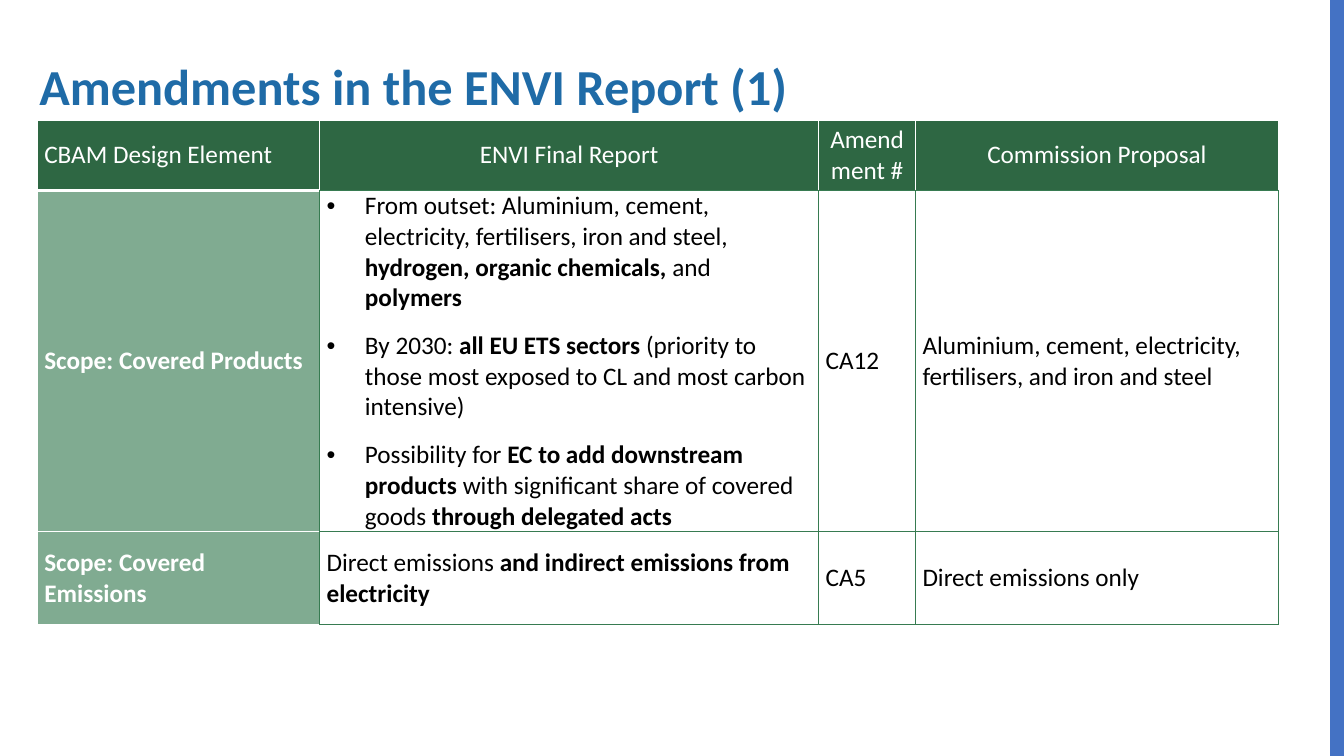
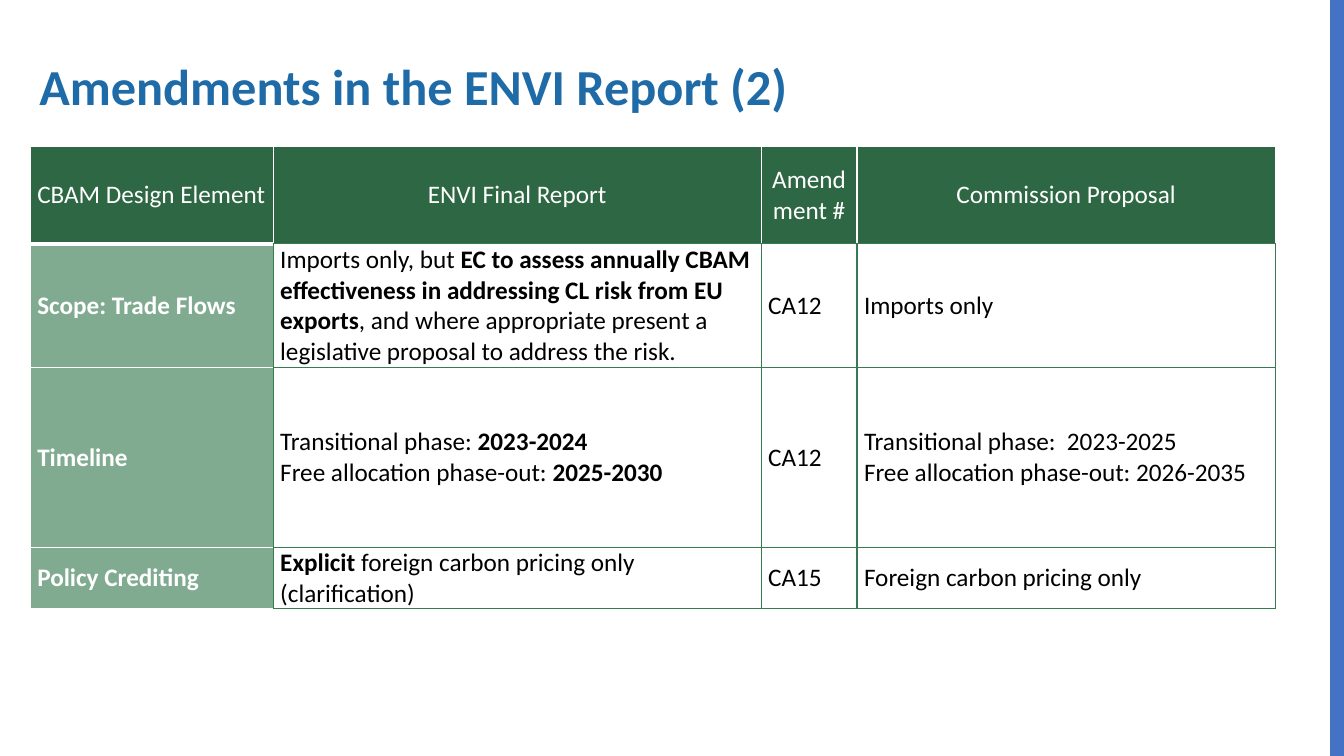
from dataclasses import dataclass

from lxml.etree import SubElement as Sub
from pptx import Presentation as Deck
from pptx.dml.color import RGBColor as Rgb
from pptx.enum.shapes import MSO_CONNECTOR as Conn
from pptx.enum.text import MSO_ANCHOR as Anchor, MSO_AUTO_SIZE as Fit, PP_ALIGN as Align
from pptx.oxml.ns import qn
from pptx.util import Inches, Pt


@dataclass(frozen=True)
class Theme:
    font: str = "Calibri"
    title: str = "1F6BA7"
    band: str = "4472C4"
    head: str = "2E6743"
    green: str = "377B51"
    white: str = "FFFFFF"
    black: str = "000000"
    big: int = 36
    small: int = 18
    tint: int = 63


HEAD = ["CBAM Design Element", "ENVI Final Report", "Amendment #", "Commission Proposal"]


class Show:
    def __init__(self, theme):
        self.theme = theme
        self.deck = Deck()
        self.deck.slide_width = Inches(13.33)
        self.deck.slide_height = Inches(7.5)
        self.layout = self.deck.slide_layouts[5]
        self.slide = None
        title = self.layout.placeholders[0]
        title.left, title.top = Inches(0.29), Inches(0.46)
        title.width, title.height = Inches(11.96), Inches(0.73)

    def page(self, text):
        self.slide = self.deck.slides.add_slide(self.layout)
        self.band()
        self.title(text)

    def band(self):
        x = Inches(13.27)
        line = self.slide.shapes.add_connector(Conn.STRAIGHT, x, 0, x, Inches(7.5))
        line.line.color.rgb = Rgb.from_string(self.theme.band)
        line.line.width = Pt(12)
        Sub(line.element.spPr, qn("a:effectLst"))

    def title(self, text):
        frame = self.slide.shapes.title.text_frame
        frame.text = text
        frame.auto_size = Fit.NONE
        frame.vertical_anchor = Anchor.TOP
        para = frame.paragraphs[0]
        para.alignment = Align.LEFT
        para.line_spacing = 1.07
        self.style(para.runs[0], self.theme.big, self.theme.title, True)

    def style(self, run, size, color, bold):
        font = run.font
        font.name, font.size, font.bold = self.theme.font, Pt(size), bold
        font.color.rgb = Rgb.from_string(color)

    def bullet(self, para):
        props = para._p.get_or_add_pPr()
        props.set("marL", str(Inches(0.38)))
        props.set("indent", str(Inches(-0.38)))
        Sub(props, qn("a:buFont"), typeface="Arial")
        Sub(props, qn("a:buChar"), char="•")

    def phrase(self, para, text, color, bold):
        for spot, part in enumerate(text.split("**")):
            for row, words in enumerate(part.split("\v")):
                if row:
                    para.add_line_break()
                if words:
                    run = para.add_run()
                    run.text = words
                    self.style(run, self.theme.small, color, bold or spot % 2 == 1)

    def label(self, cell, text, color, bold=False, gap=6, align=Align.LEFT):
        cell.vertical_anchor = Anchor.MIDDLE
        cell.margin_left = cell.margin_right = Inches(0.07)
        cell.margin_top = cell.margin_bottom = 0
        frame = cell.text_frame
        items = text.split("\n")
        for spot, item in enumerate(items):
            para = frame.add_paragraph() if spot else frame.paragraphs[0]
            para.alignment = align
            para.space_before = Pt(gap if spot else 0)
            para.space_after = Pt(gap)
            if len(items) > 1:
                self.bullet(para)
            self.phrase(para, item, color, bold)

    def paint(self, cell, color, tint=100):
        cell.fill.solid()
        cell.fill.fore_color.rgb = Rgb.from_string(color)
        if tint < 100:
            tone = cell._tc.tcPr.find(".//" + qn("a:srgbClr"))
            Sub(tone, qn("a:alpha"), val=str(tint * 1000))

    def edge(self, cell, left, right, top, base, thick=1):
        props = cell._tc.get_or_add_tcPr()
        sides = zip(("L", "R", "T", "B"), (left, right, top, base), (1, 1, 1, thick))
        for spot, (side, color, width) in enumerate(sides):
            line = Sub(props, qn("a:ln" + side), w=str(Pt(width)))
            Sub(Sub(line, qn("a:solidFill")), qn("a:srgbClr"), val=color)
            props.insert(spot, line)

    def dress(self, cell, row, col, text):
        look = self.theme
        white, green = look.white, look.green
        if row == 0:
            self.label(cell, text, white, gap=3, align=Align.CENTER if col else Align.LEFT)
            self.paint(cell, look.head)
            self.edge(cell, white, white, white, green if col else white, 1 if col else 3)
        elif col == 0:
            self.label(cell, text, white, bold=True)
            self.paint(cell, green, look.tint)
            self.edge(cell, white, green, white, white)
        else:
            self.label(cell, text, look.black)
            cell.fill.background()
            self.edge(cell, green, green, green, green)

    def table(self, left, top, cols, rows, body):
        data = [HEAD, *body]
        frame = self.slide.shapes.add_table(
            len(rows), len(cols), Inches(left), Inches(top), Inches(sum(cols)), Inches(sum(rows))
        )
        grid = frame.table
        grid.first_row = grid.horz_banding = False
        for col, width in zip(grid.columns, cols):
            col.width = Inches(width)
        for row, height in zip(grid.rows, rows):
            row.height = Inches(height)
        for row, texts in enumerate(data):
            for col, text in enumerate(texts):
                self.dress(grid.cell(row, col), row, col, text)


SCOPE = [
    [
        "Scope: Covered Products",
        "From outset: Aluminium, cement, electricity, fertilisers, iron and steel, "
        "**hydrogen, organic chemicals, **and** polymers**\n"
        "By 2030: **all EU ETS sectors **(priority to those most exposed to CL "
        "and most carbon intensive)\n"
        "Possibility for **EC to add downstream products **with significant share "
        "of covered goods **through delegated acts**",
        "CA12",
        "Aluminium, cement, electricity, fertilisers, and iron and steel",
    ],
    [
        "Scope: Covered Emissions",
        "Direct emissions **and indirect emissions from electricity**",
        "CA5",
        "Direct emissions only",
    ],
]

FLOWS = [
    [
        "Scope: Trade Flows",
        "Imports only, but **EC to assess annually CBAM effectiveness in addressing "
        "CL risk from EU exports**, and where appropriate present a legislative "
        "proposal to address the risk.",
        "CA12",
        "Imports only",
    ],
    [
        "Timeline",
        "Transitional phase: **2023-2024**\vFree allocation phase-out: **2025-2030**",
        "CA12",
        "Transitional phase:  2023-2025\vFree allocation phase-out: 2026-2035",
    ],
    [
        "Policy Crediting",
        "**Explicit **foreign carbon pricing only (clarification)",
        "CA15",
        "Foreign carbon pricing only",
    ],
]


def main():
    show = Show(Theme())
    show.page("Amendments in the ENVI Report (1)")
    show.table(0.37, 1.19, [2.8, 4.95, 0.96, 3.6], [0.7, 3.38, 0.92], SCOPE)
    show.page("Amendments in the ENVI Report (2)")
    show.table(0.3, 1.45, [2.41, 4.84, 0.95, 4.15], [0.97, 1.23, 1.78, 0.61], FLOWS)
    show.deck.save("out.pptx")


if __name__ == "__main__":
    main()
